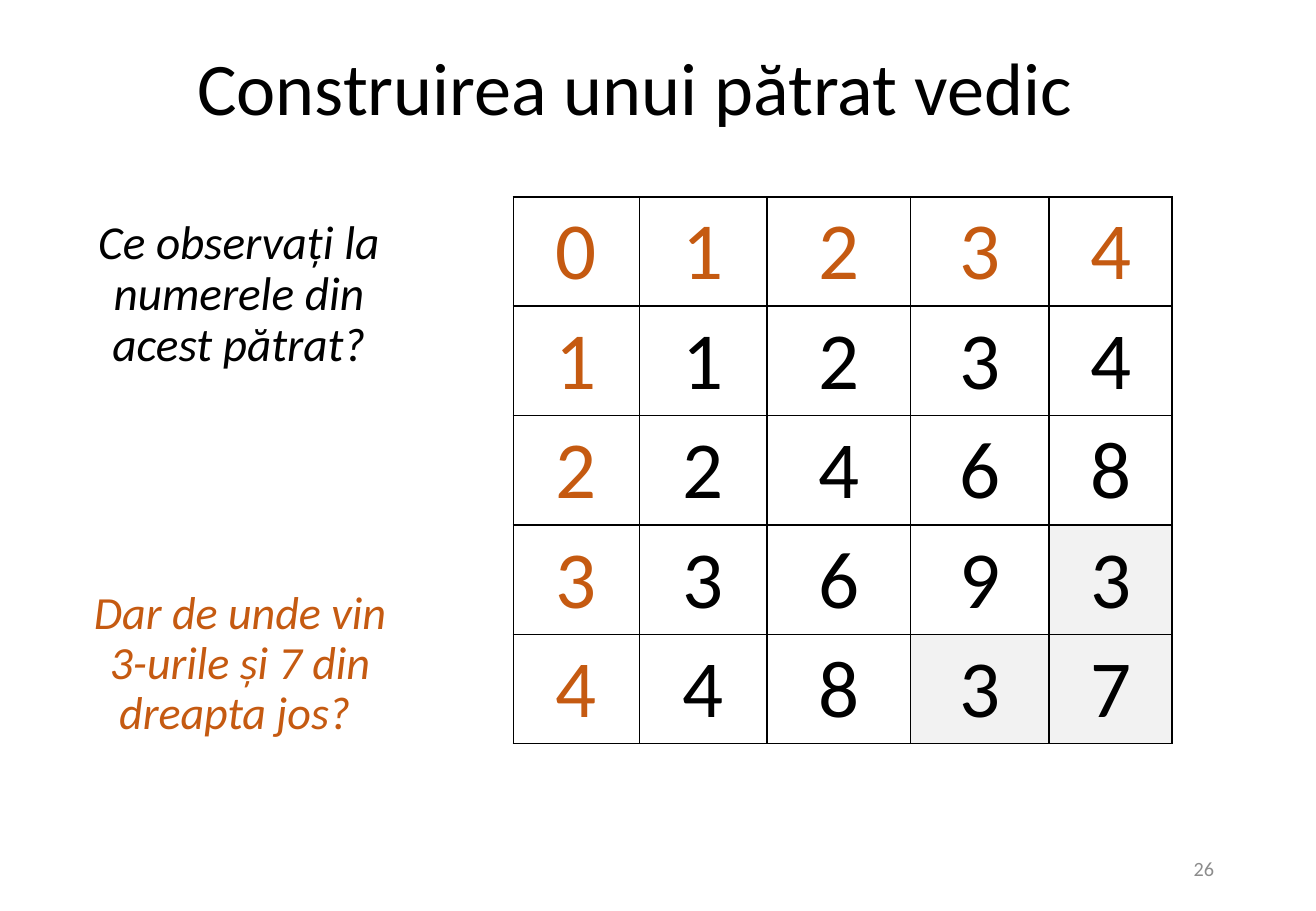
from lxml import etree
from pptx import Presentation
from pptx.dml.color import RGBColor
from pptx.enum.text import MSO_ANCHOR, PP_ALIGN
from pptx.oxml.ns import qn
from pptx.util import Inches, Pt

CENTER, RIGHT = PP_ALIGN.CENTER, PP_ALIGN.RIGHT
TOP, MIDDLE = MSO_ANCHOR.TOP, MSO_ANCHOR.MIDDLE

BLACK = RGBColor(0x00, 0x00, 0x00)
WHITE = RGBColor(0xFF, 0xFF, 0xFF)
ORANGE = RGBColor(0xC5, 0x5A, 0x11)
PALE_GRAY = RGBColor(0xF2, 0xF2, 0xF2)
NUMBER_GRAY = RGBColor(0x8C, 0x8C, 0x8C)

FONT = "Calibri"
WIDTH, HEIGHT = Inches(10.83), Inches(7.5)
SQUARE_SIZE = 5
COLUMN_SHARES = (9.6, 9.7, 10.9, 10.53, 9.33)
ROW_SHARE = 12


def across(share):
    """Length as a percentage of the slide width."""
    return round(WIDTH * share / 100)


def down(share):
    """Length as a percentage of the slide height."""
    return round(HEIGHT * share / 100)


def style_text(para, size, color, align=CENTER, italic=False):
    para.alignment = align
    for span in para.runs:
        span.font.name = FONT
        span.font.size = Pt(size)
        span.font.italic = italic
        span.font.color.rgb = color


def add_text(page, place, text, size, color=BLACK, align=CENTER,
             anchor=MIDDLE, italic=False, spacing=1.0):
    left, top, width, height = place
    box = page.shapes.add_textbox(across(left), down(top),
                                  across(width), down(height))
    frame = box.text_frame
    frame.word_wrap = True
    frame.vertical_anchor = anchor
    frame.text = text
    para = frame.paragraphs[0]
    para.line_spacing = spacing
    style_text(para, size, color, align, italic)


def add_borders(cell):
    properties = cell._tc.get_or_add_tcPr()
    for position, side in enumerate(("a:lnL", "a:lnR", "a:lnT", "a:lnB")):
        line = etree.Element(qn(side), w=str(Pt(1)))
        fill = etree.SubElement(line, qn("a:solidFill"))
        etree.SubElement(fill, qn("a:srgbClr"), val=str(BLACK))
        properties.insert(position, line)


def fill_cell(cell, row, column):
    # Edge cells number the square; inner ones hold the digit sum of the product
    product = row * column
    is_edge = product == 0
    value = row + column if is_edge else 1 + (product - 1) % 9
    cell.text = str(value)
    cell.vertical_anchor = MIDDLE
    cell.margin_left = cell.margin_right = Inches(0.08)
    cell.margin_top = cell.margin_bottom = Inches(0.05)
    style_text(cell.text_frame.paragraphs[0], 48, ORANGE if is_edge else BLACK)
    cell.fill.solid()
    cell.fill.fore_color.rgb = PALE_GRAY if product > 9 else WHITE
    add_borders(cell)


def add_vedic_square(page, left, top):
    frame = page.shapes.add_table(
        SQUARE_SIZE, SQUARE_SIZE, across(left), down(top),
        across(sum(COLUMN_SHARES)), down(ROW_SHARE * SQUARE_SIZE))
    table = frame.table
    table.first_row = table.horz_banding = False
    for column, share in zip(table.columns, COLUMN_SHARES):
        column.width = across(share)
    for row in range(SQUARE_SIZE):
        table.rows[row].height = down(ROW_SHARE)
        for column in range(SQUARE_SIZE):
            fill_cell(table.cell(row, column), row, column)


def main():
    deck = Presentation()
    deck.slide_width, deck.slide_height = WIDTH, HEIGHT
    page = deck.slides.add_slide(deck.slide_layouts[6])

    # Title
    add_text(page, (2.2, 3.87, 92.1, 11.2), "Construirea unui pătrat vedic", 44,
             anchor=TOP)

    # Questions beside the square
    add_text(page, (3.7, 21.6, 28.9, 21.5),
             "Ce observați la numerele din acest pătrat?", 28,
             italic=True, spacing=0.9)
    add_text(page, (5.26, 64.13, 25.95, 21.5),
             "Dar de unde vin 3-urile și 7 din dreapta jos? ", 27.3, ORANGE,
             anchor=TOP, italic=True, spacing=0.9)

    # Vedic square
    add_vedic_square(page, 39, 21.6)

    # Page number
    add_text(page, (70.64, 92.67, 22.53, 5.33), "26", 12, NUMBER_GRAY, RIGHT)

    deck.save("out.pptx")


if __name__ == "__main__":
    main()
